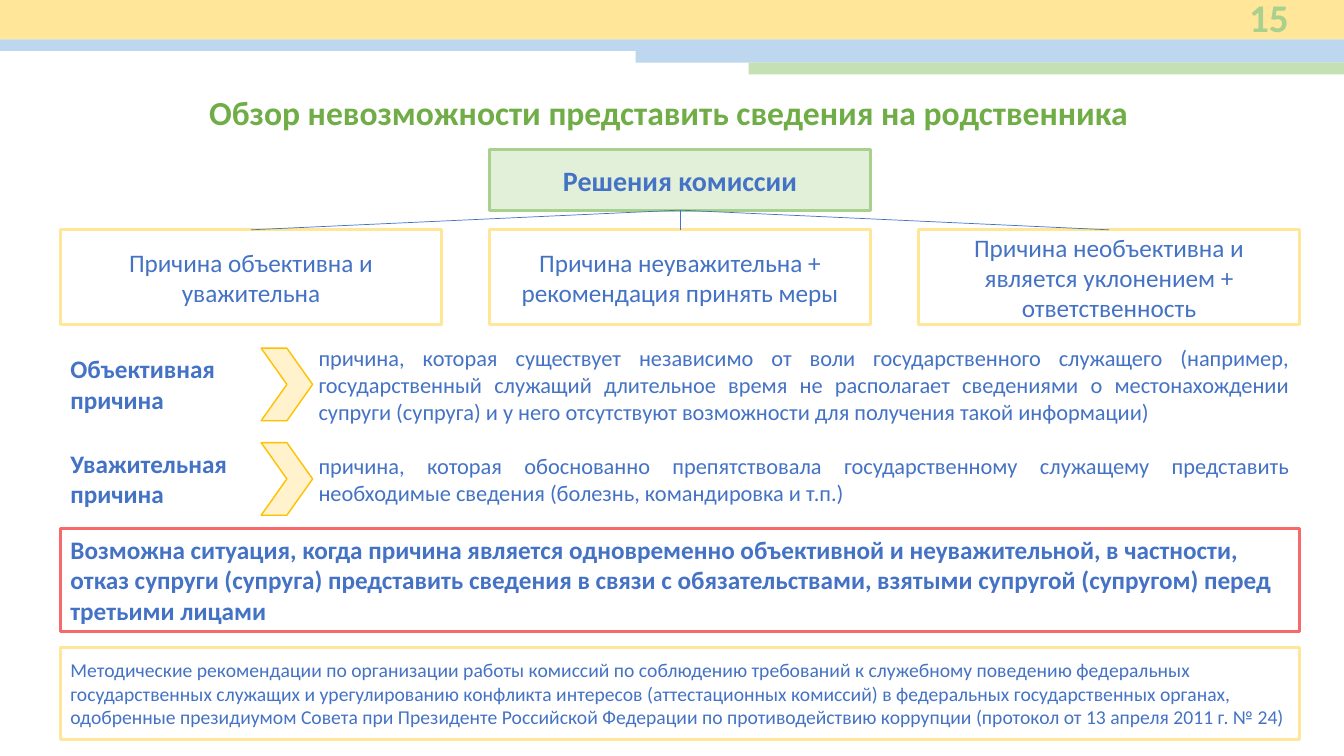
from lxml.etree import SubElement
from pptx import Presentation
from pptx.dml.color import RGBColor
from pptx.enum.shapes import MSO_CONNECTOR, MSO_SHAPE
from pptx.enum.text import MSO_ANCHOR, PP_ALIGN
from pptx.oxml.ns import qn
from pptx.util import Inches, Pt

COLORS = {
    "yellow": "FFE699", "pale_yellow": "FFF2CC", "gold": "FFC000",
    "sky": "BDD7EE", "blue": "4472C4", "red": "F8696B", "white": "FFFFFF",
    "green": "70AD47", "soft_green": "A9D18E", "light_green": "C5E0B4",
    "pale_green": "E2F0D9",
}


class SlideBuilder:
    """Draws on one slide; every length is a percentage of the slide's size."""

    font_name = "Calibri"

    def __init__(self, deck):
        self.deck = deck
        self.slide = deck.slides.add_slide(deck.slide_layouts[6])

    def horizontal(self, share):
        return round(self.deck.slide_width * share / 100)

    def vertical(self, share):
        return round(self.deck.slide_height * share / 100)

    def place(self, left, top, width, height):
        return (self.horizontal(left), self.vertical(top),
                self.horizontal(width), self.vertical(height))

    def color(self, name):
        return RGBColor.from_string(COLORS[name])

    def label(self, shape, text, size, color="blue", bold=False,
              align=PP_ALIGN.LEFT, anchor=MSO_ANCHOR.MIDDLE):
        frame = shape.text_frame
        frame.word_wrap = True
        frame.vertical_anchor = anchor
        frame.text = text
        for paragraph in frame.paragraphs:
            paragraph.alignment = align
            for span in paragraph.runs:
                span.font.name = self.font_name
                span.font.size = Pt(size)
                span.font.bold = bold
                span.font.color.rgb = self.color(color)

    def text(self, area, text, size, **style):
        box = self.slide.shapes.add_textbox(*self.place(*area))
        self.label(box, text, size, **style)

    def shape(self, area, fill=None, line=None, line_width=2.25,
              kind=MSO_SHAPE.RECTANGLE):
        shape = self.slide.shapes.add_shape(kind, *self.place(*area))
        shape.shadow.inherit = False
        if fill:
            shape.fill.solid()
            shape.fill.fore_color.rgb = self.color(fill)
        else:
            shape.fill.background()
        if line:
            shape.line.color.rgb = self.color(line)
            shape.line.width = Pt(line_width)
        else:
            shape.line.fill.background()
        return shape

    def line(self, start, end, color="blue", width=0.5):
        connector = self.slide.shapes.add_connector(
            MSO_CONNECTOR.STRAIGHT,
            self.horizontal(start[0]), self.vertical(start[1]),
            self.horizontal(end[0]), self.vertical(end[1]))
        connector.line.color.rgb = self.color(color)
        connector.line.width = Pt(width)
        SubElement(connector._element.spPr, qn("a:effectLst"))


MARGIN, CONTENT_WIDTH = 4.5, 92.2
CARD_WIDTH, CARD_STEP = 28.35, 31.92
CARD_TOP, CARD_HEIGHT = 30.4, 12.53
ROOT_TOP, ROOT_HEIGHT = 19.8, 8
STRIPE_TOP, STRIPE_HEIGHT = 5.2, 1.55
DEFINITION_TOP, DEFINITION_STEP = 45, 12.5

OUTCOMES = [
    "Причина объективна и уважительна",
    "Причина неуважительна + рекомендация принять меры",
    "Причина необъективна и является уклонением + ответственность",
]
DEFINITIONS = [
    ("Объективная\nпричина",
     "причина, которая существует независимо от воли государственного служащего "
     "(например, государственный служащий длительное время не располагает "
     "сведениями о местонахождении супруги (супруга) и у него отсутствуют "
     "возможности для получения такой информации)"),
    ("Уважительная\nпричина",
     "причина, которая обоснованно препятствовала государственному служащему "
     "представить необходимые сведения (болезнь, командировка и т.п.)"),
]
WARNING = (
    "Возможна ситуация, когда причина является одновременно объективной и "
    "неуважительной, в частности, отказ супруги (супруга) представить сведения "
    "в связи с обязательствами, взятыми супругой (супругом) перед третьими лицами")
SOURCE = (
    "Методические рекомендации по организации работы комиссий по соблюдению "
    "требований к служебному поведению федеральных государственных служащих и "
    "урегулированию конфликта интересов (аттестационных комиссий) в федеральных "
    "государственных органах, одобренные президиумом Совета при Президенте "
    "Российской Федерации по противодействию коррупции "
    "(протокол от 13 апреля 2011 г. № 24)")


def main():
    deck = Presentation()
    deck.slide_width, deck.slide_height = Inches(13.33), Inches(7.5)
    page = SlideBuilder(deck)

    # Header bands and page number
    page.shape((0, 0, 100, STRIPE_TOP), fill="yellow")
    stripes = [(0, "sky"), (47.3, "sky"), (55.7, "light_green")]
    for row, (left, color) in enumerate(stripes):
        top = STRIPE_TOP + row * STRIPE_HEIGHT
        page.shape((left, top, 100 - left, STRIPE_HEIGHT), fill=color)
    page.text((87.25, -0.67, 9.38, 5.87), "15", 28, color="soft_green",
              bold=True, align=PP_ALIGN.RIGHT)

    # Title
    page.text((4.25, 11.47, 91, 6.67),
              "Обзор невозможности представить сведения на родственника", 24,
              color="green", bold=True, align=PP_ALIGN.CENTER,
              anchor=MSO_ANCHOR.TOP)

    # Decision tree
    root_left = MARGIN + CARD_STEP
    root = page.shape((root_left, ROOT_TOP, CARD_WIDTH, ROOT_HEIGHT),
                      fill="pale_green", line="soft_green")
    page.label(root, "Решения комиссии", 20, bold=True, align=PP_ALIGN.CENTER)
    root_bottom = (root_left + CARD_WIDTH / 2, ROOT_TOP + ROOT_HEIGHT)
    for column, outcome in enumerate(OUTCOMES):
        left = MARGIN + column * CARD_STEP
        card = page.shape((left, CARD_TOP, CARD_WIDTH, CARD_HEIGHT),
                          fill="white", line="yellow")
        page.label(card, outcome, 18, align=PP_ALIGN.CENTER)
        page.line(root_bottom, (left + CARD_WIDTH / 2, CARD_TOP))

    # Definitions of the two kinds of reason
    for row, (term, meaning) in enumerate(DEFINITIONS):
        top = DEFINITION_TOP + row * DEFINITION_STEP
        page.text((22.96, top + 1.9, 73.74, 7.87), meaning, 16,
                  align=PP_ALIGN.JUSTIFY)
        page.text((MARGIN, top, 19.28, 11.6), term, 18, bold=True)
        page.shape((19.43, top + 1.05, 3.83, 9.6), fill="pale_yellow",
                   line="gold", line_width=1, kind=MSO_SHAPE.CHEVRON)

    # Warning and source
    warning = page.shape((MARGIN, 69.9, CONTENT_WIDTH, 13.6), line="red")
    page.label(warning, WARNING, 18, bold=True)
    source = page.shape((MARGIN, 85.6, CONTENT_WIDTH, 12.27), line="yellow")
    page.label(source, SOURCE, 14)

    deck.save("out.pptx")


if __name__ == "__main__":
    main()
